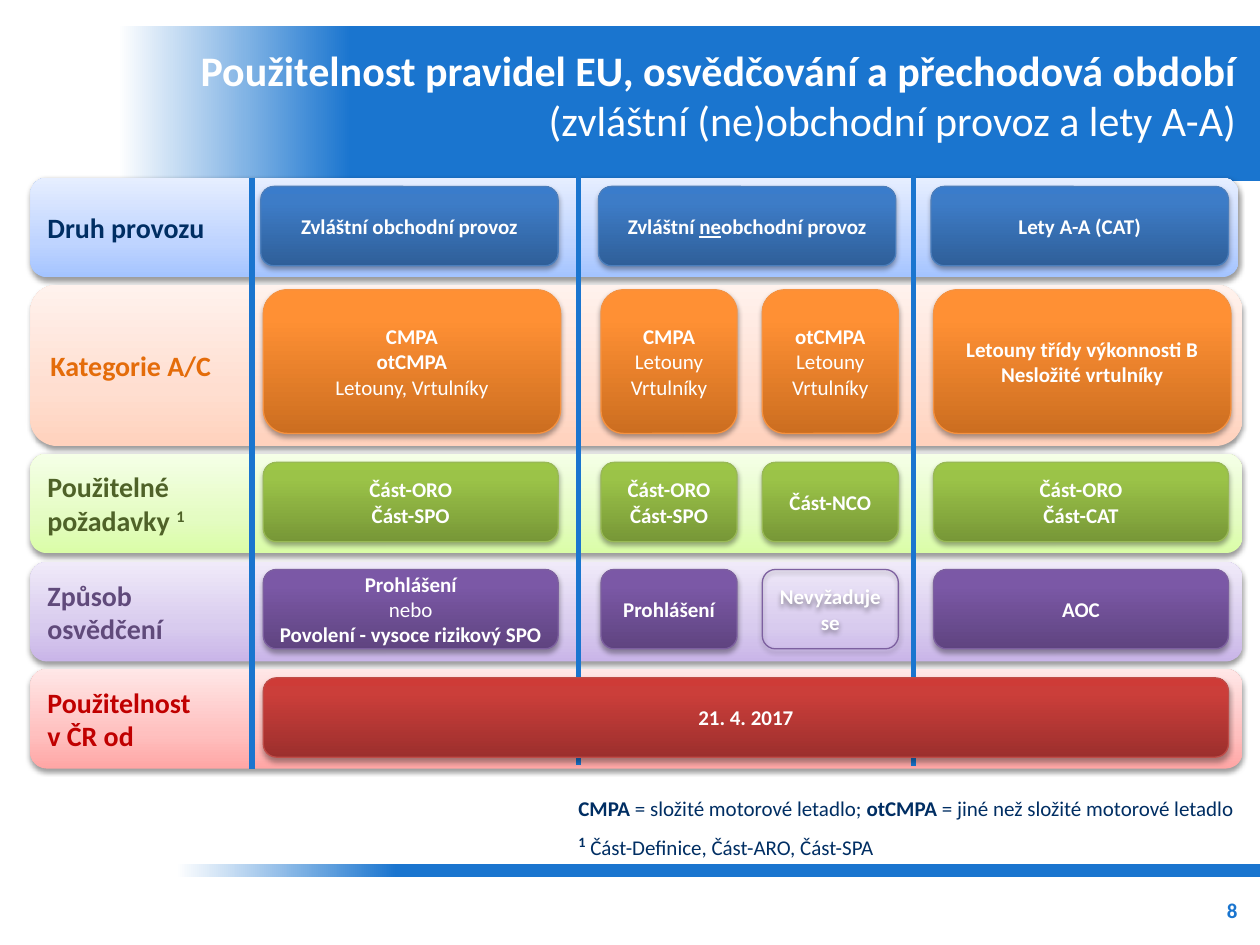
from copy import deepcopy

from lxml import etree
from pptx import Presentation
from pptx.dml.color import RGBColor
from pptx.enum.shapes import MSO_CONNECTOR, MSO_SHAPE
from pptx.enum.text import MSO_ANCHOR, MSO_AUTO_SIZE, PP_ALIGN
from pptx.oxml.ns import qn
from pptx.util import Inches, Pt

LEFT, MID, RIGHT, FULL = PP_ALIGN.LEFT, PP_ALIGN.CENTER, PP_ALIGN.RIGHT, PP_ALIGN.JUSTIFY
RECT, ROUND = MSO_SHAPE.RECTANGLE, MSO_SHAPE.ROUNDED_RECTANGLE
LINE = MSO_CONNECTOR.STRAIGHT
MIDDLE, FIXED = MSO_ANCHOR.MIDDLE, MSO_AUTO_SIZE.NONE
BLUE, NAVY, WHITE = "1A75CF", "002E63", "FFFFFF"
UP = 90


def color(text):
    return RGBColor.from_string(text)


def inches(*sizes):
    return [Inches(size) for size in sizes]


class Deck:
    font = "Calibri"

    def __init__(self):
        self.prs = Presentation()
        self.prs.slide_width, self.prs.slide_height = inches(10, 7.5)
        self.slide = self.prs.slides.add_slide(self.prs.slide_layouts[5])
        self.shapes = self.slide.shapes

    def label(self, frame, paras, size, ink, align):
        frame.word_wrap = True
        for i, runs in enumerate(paras):
            para = frame.add_paragraph() if i else frame.paragraphs[0]
            para.alignment = align
            for text, style in [(runs, "b")] if isinstance(runs, str) else runs:
                run = para.add_run()
                run.text = text
                font = run.font
                font.name, font.size = self.font, Pt(size)
                font.color.rgb = color(ink)
                font.bold = "b" in style
                if "u" in style:
                    font.underline = True
                if "^" in style:
                    font._element.set("baseline", "30000")

    def blend(self, shape, stops, angle):
        fill = shape.fill
        fill.gradient()
        fill.gradient_angle = angle
        group = shape._element.spPr.find(qn("a:gradFill")).find(qn("a:gsLst"))
        while len(group) < len(stops):
            group.append(deepcopy(group[0]))
        for stop, (place, tint) in zip(fill.gradient_stops, stops):
            stop.position = place / 100
            stop.color.rgb = color(tint)

    def shade(self, shape, alpha, dist):
        effects = shape._element.spPr.find(qn("a:effectLst"))
        outer = etree.SubElement(effects, qn("a:outerShdw"), blurRad=str(Pt(3.1)),
                                 dist=str(Pt(dist)), dir="5400000", rotWithShape="0")
        tint = etree.SubElement(outer, qn("a:srgbClr"), val="000000")
        etree.SubElement(tint, qn("a:alpha"), val=str(alpha * 1000))

    def shape(self, kind, box, stops, angle, edge=None):
        shape = self.shapes.add_shape(kind, *inches(*box))
        shape.shadow.inherit = False
        if stops:
            self.blend(shape, stops, angle)
        else:
            shape.fill.background()
        if edge:
            shape.line.color.rgb = color(edge)
            shape.line.width = Pt(0.75)
        else:
            shape.line.fill.background()
        return shape

    def bar(self, *box):
        bar = self.shape(RECT, box, [(2, WHITE), (22, BLUE)], 0)
        self.shapes._spTree.insert(2, bar._element)

    def title(self, box, runs):
        title = self.shapes.title
        title.left, title.top, title.width, title.height = inches(*box)
        frame = title.text_frame
        frame.auto_size, frame.vertical_anchor = FIXED, MIDDLE
        para = frame.paragraphs[0]
        para.text = "\v".join(text for text, _ in runs)
        para.alignment = RIGHT
        for run, (_, bold) in zip(para.runs, runs):
            run.font.name, run.font.size, run.font.bold = self.font, Pt(24), bold
            run.font.color.rgb = color(WHITE)

    def band(self, box, tints, ink, paras):
        band = self.shape(ROUND, box, list(zip((0, 35, 100), tints)), UP)
        self.shade(band, 38, 1.6)
        self.label(band.text_frame, paras, 16, ink, LEFT)

    def cell(self, box, tints, edge, paras):
        cell = self.shape(ROUND, box, list(zip((0, 80, 100), tints)), UP, edge)
        self.shade(cell, *((35, 1.8) if tints else (38, 1.6)))
        frame = cell.text_frame
        frame.margin_left = frame.margin_right = Inches(0.08)
        self.label(frame, paras, 12, WHITE, MID)

    def rule(self, x, top, end):
        rule = self.shapes.add_connector(LINE, *inches(x, top, x, end))
        rule.line.color.rgb = color(BLUE)
        rule.line.width = Pt(3)
        etree.SubElement(rule._element.spPr, qn("a:effectLst"))

    def text(self, box, paras, ink, align):
        frame = self.shapes.add_textbox(*inches(*box)).text_frame
        self.label(frame, paras, 12, ink, align)
        return frame


BANDS = [
    (1.41, 9.59, 0.79, ("A4C4FF", "BFD4FF", "E6EEFF"), NAVY, ["Druh provozu"]),
    (2.26, 9.62, 1.28, ("FFD2BD", "FFDED0", "FFF2ED"), "E46C0A", ["Kategorie A/C"]),
    (3.6, 9.62, 0.79, ("DAFDA7", "E4FCC2", "F5FFE7"), "4F6228",
     ["Použitelné", [("požadavky ", "b"), ("1", "b^")]]),
    (4.46, 9.62, 0.79, ("C9B5E8", "D8CBEE", "F0EAF9"), "604A7B", ["Způsob", "osvědčení"]),
    (5.31, 9.62, 0.79, ("FFA6A5", "FFC0BF", "FFE7E7"), "C00000", ["Použitelnost", "v ČR od"]),
]
ONE, TWO, HALF, LAST = 2.09, 4.77, 6.05, 7.41
WIDE, SLIM = 2.34, 1.08
PLANES = [[("Letouny", "")], [("Vrtulníky", "")]]
ROWS = [
    (1.48, 0.63, ("2F5F99", "3D7CC7", "3A7CCB"), "4B7EBC", [
        (2.07, 2.36, ["Zvláštní obchodní provoz"]),
        (4.75, 2.36, [[("Zvláštní ", "b"), ("ne", "bu"), ("obchodní provoz", "b")]]),
        (7.39, 2.36, ["Lety A-A (CAT)"])]),
    (2.3, 1.14, ("CC6E20", "FF9034", "FF9136"), "F69240", [
        (ONE, 2.36, ["CMPA", "otCMPA", [("Letouny, Vrtulníky", "")]]),
        (TWO, SLIM, ["CMPA"] + PLANES),
        (HALF, SLIM, ["otCMPA"] + PLANES),
        (LAST, 2.36, ["Letouny třídy výkonnosti B", "Nesložité vrtulníky"])]),
    (3.67, 0.63, ("779737", "9BC348", "9DC746"), "98B955", [
        (ONE, WIDE, ["Část-ORO", "Část-SPO"]),
        (TWO, SLIM, ["Část-ORO", "Část-SPO"]),
        (HALF, SLIM, ["Část-NCO"]),
        (LAST, WIDE, ["Část-ORO", "Část-CAT"])]),
    (4.52, 0.63, ("5F4480", "7B58A6", "7C57A8"), "7D60A0", [
        (ONE, WIDE, ["Prohlášení", [("nebo", "")], "Povolení - vysoce rizikový SPO"]),
        (TWO, SLIM, ["Prohlášení"]),
        (LAST, WIDE, ["AOC"])]),
    (4.52, 0.63, (), "7D60A0", [(HALF, SLIM, ["Nevyžaduje se"])]),
]
NOTES = [
    [("CMPA", "b"), (" = složité motorové letadlo; ", ""), ("otCMPA", "b"),
     (" = jiné než složité motorové letadlo", "")],
    [("1", "b^"), (" Část-Definice, Část-ARO, Část-SPA", "")],
]


def main():
    deck = Deck()
    deck.bar(0.75, 0.21, 9.25, 1.23)
    deck.bar(1.22, 6.86, 8.78, 0.1)
    deck.title((0.92, 0.21, 8.99, 1.08), [
        ("Použitelnost pravidel EU, osvědčování a přechodová období", True),
        ("(zvláštní (ne)obchodní provoz a lety A-A)", False)])
    page = deck.text((7.59, 7.02, 2.33, 0.4), ["8"], BLUE, RIGHT)
    page.vertical_anchor = MIDDLE
    for top, width, height, tints, ink, paras in BANDS:
        deck.band((0.24, top, width, height), tints, ink, paras)
    for top, height, tints, edge, cells in ROWS:
        for left, width, paras in cells:
            deck.cell((left, top, width, height), tints, edge, paras)
    for x, top, end in [(2, 1.41, 6.1), (4.59, 1.38, 6.07), (7.25, 1.4, 6.08)]:
        deck.rule(x, top, end)
    deck.cell((ONE, 5.38, 7.66, 0.63), ("9C2F2D", "CB3E3A", "CE3B37"), "BF4C48",
              ["21. 4. 2017"])
    notes = deck.text((4.5, 6.27, 5.4, 0.58), NOTES, NAVY, FULL)
    notes.margin_left, notes.margin_right = inches(0.09, 0.05)
    notes.margin_top = notes.margin_bottom = Inches(0.04)
    last = notes.paragraphs[1]
    last.space_before = Pt(6)
    last.runs[0].font.size = Pt(14)
    deck.prs.save("out.pptx")


if __name__ == "__main__":
    main()
